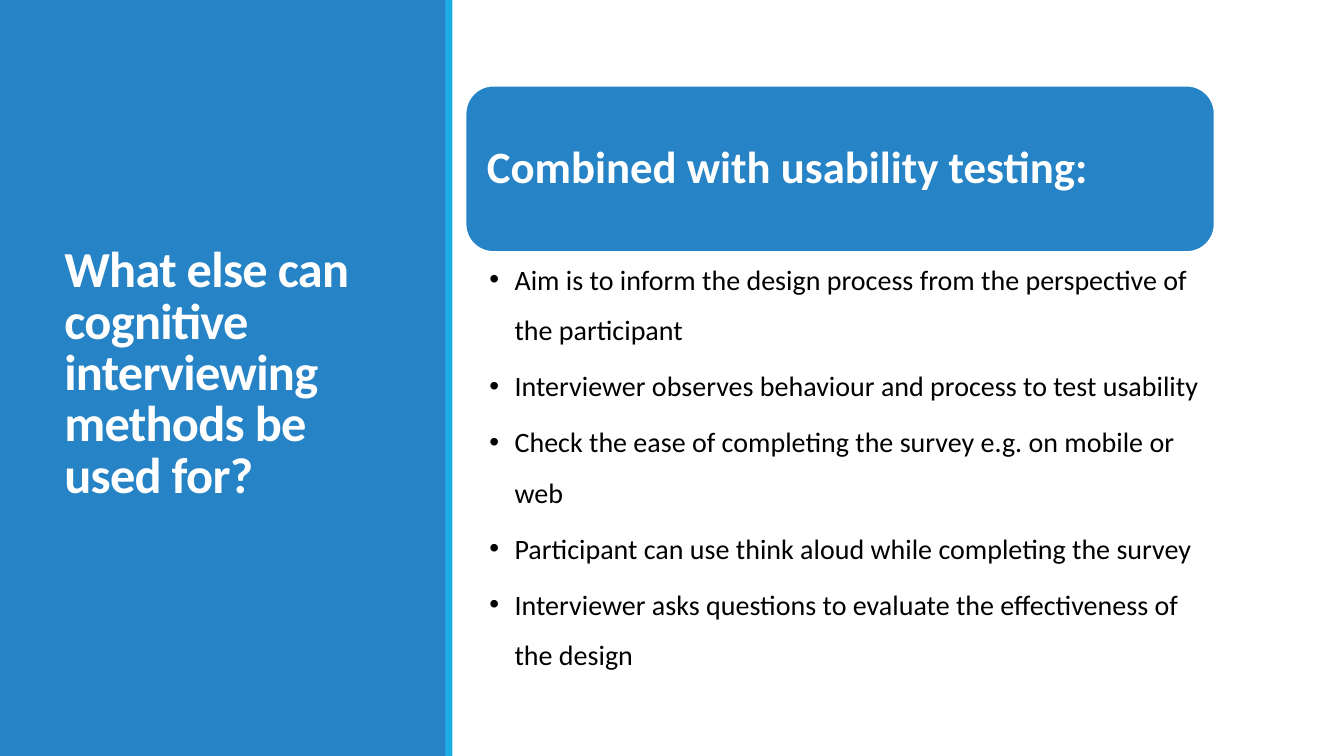
"""Build the slide on further uses of cognitive interviewing methods."""
from dataclasses import dataclass

from lxml import etree
from pptx import Presentation
from pptx import util as u
from pptx.dml.color import RGBColor
from pptx.enum import shapes, text
from pptx.oxml import ns

BULLETS = (
    "Aim is to inform the design process from the perspective of the participant",
    "Interviewer observes behaviour and process to test usability",
    "Check the ease of completing the survey e.g. on mobile or web",
    "Participant can use think aloud while completing the survey",
    "Interviewer asks questions to evaluate the effectiveness of the design",
)


@dataclass(frozen=True)
class Theme:
    font: str = "Calibri"
    blue: RGBColor = RGBColor(0x26, 0x83, 0xC6)
    accent: RGBColor = RGBColor(0x1C, 0xAD, 0xE4)
    white: RGBColor = RGBColor(0xFF, 0xFF, 0xFF)
    black: RGBColor = RGBColor(0, 0, 0)
    title_size: int = 36
    heading_size: int = 32
    body_size: int = 20


THEME = Theme()


def points(*lengths):
    return [u.Pt(length) for length in lengths]


def add_block(slide, box, fill, kind=shapes.MSO_SHAPE.RECTANGLE):
    shape = slide.shapes.add_shape(kind, *points(*box))
    shape.shadow.inherit = False
    shape.fill.solid()
    shape.fill.fore_color.rgb = fill
    shape.line.fill.background()
    return shape


def set_text(shape, lines, size, color, spacing, insets, bold=False,
             anchor=text.MSO_ANCHOR.MIDDLE):
    frame = shape.text_frame
    frame.word_wrap = True
    frame.vertical_anchor = anchor
    (frame.margin_left, frame.margin_top,
     frame.margin_right, frame.margin_bottom) = points(*insets)
    frame.text = "\n".join(lines)
    for paragraph in frame.paragraphs:
        paragraph.alignment = text.PP_ALIGN.LEFT
        paragraph.line_spacing = spacing
        for run in paragraph.runs:
            run.font.name = THEME.font
            run.font.size = u.Pt(size)
            run.font.bold = bold
            run.font.color.rgb = color
    return frame


def add_title(slide, title):
    box = slide.shapes.add_textbox(*points(38.9, 40.7, 242.6, 454.3))
    frame = set_text(box, [title], THEME.title_size, THEME.white, 0.85,
                     (7.2, 3.6, 7.2, 3.6), bold=True)
    for run in frame.paragraphs[0].runs:
        run.font._element.set("spc", "-50")


def add_heading(slide, heading):
    card = add_block(slide, (332.6, 61.2, 535, 118.8), THEME.blue,
                     shapes.MSO_SHAPE.ROUNDED_RECTANGLE)
    card.line.color.rgb = THEME.white
    card.line.width = u.Pt(1.25)
    set_text(card, [heading], THEME.heading_size, THEME.white, 0.9,
             (9.4, 9.4, 9.4, 9.4), bold=True)


def add_bullets(slide, lines):
    box = slide.shapes.add_textbox(*points(332.6, 173, 535, 317.5))
    frame = set_text(box, lines, THEME.body_size, THEME.black, 1.5,
                     (17, 2.5, 10, 2.5), anchor=text.MSO_ANCHOR.TOP)
    for paragraph in frame.paragraphs:
        paragraph.space_after = u.Pt(THEME.body_size * 0.2)
        properties = paragraph._p.get_or_add_pPr()
        properties.set("marL", str(u.Pt(18)))
        properties.set("indent", str(u.Pt(-18)))
        etree.SubElement(properties, ns.qn("a:buFont"), typeface="Arial")
        etree.SubElement(properties, ns.qn("a:buChar"), char="•")


def main():
    presentation = Presentation()
    presentation.slide_width, presentation.slide_height = points(960, 540)
    slide = presentation.slides.add_slide(presentation.slide_layouts[6])
    add_block(slide, (0, 0, 319, 540), THEME.blue)
    add_title(slide, "What else can cognitive interviewing methods be used for?")
    add_block(slide, (318.2, 0, 5, 540), THEME.accent)
    add_heading(slide, "Combined with usability testing:")
    add_bullets(slide, BULLETS)
    presentation.save("out.pptx")


if __name__ == "__main__":
    main()
